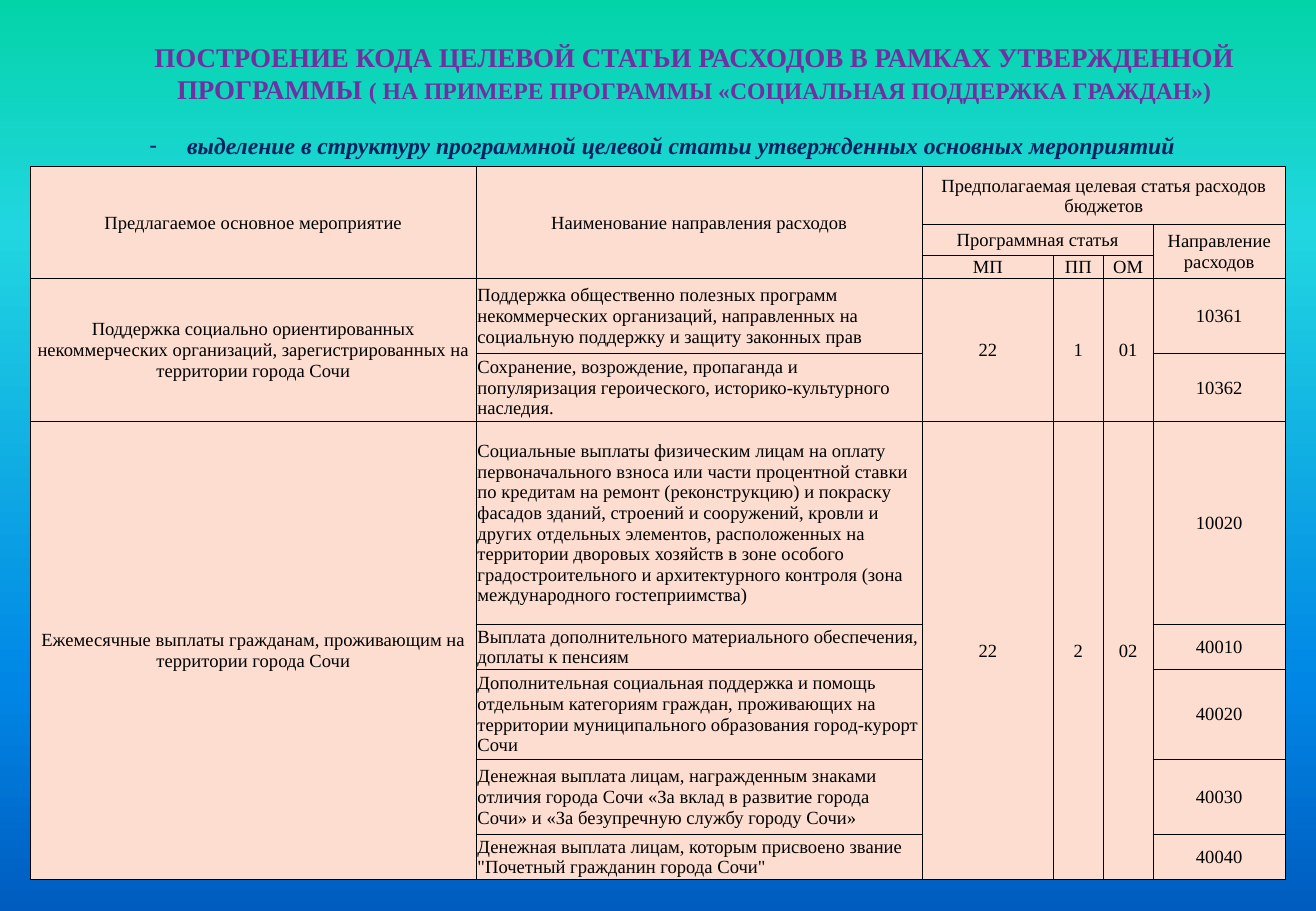
"""Builds a slide with the structure of a programme's target expenditure codes."""
from dataclasses import dataclass
from typing import Iterator

from lxml import etree
from pptx import Presentation
from pptx import util as u
from pptx.dml import color as dml
from pptx.enum import text as t
from pptx.oxml import ns

GRID_COLUMNS, GRID_ROWS = 1083, 750
SLIDE_WIDTH, SLIDE_HEIGHT = u.Inches(10.83), u.Inches(7.5)
MEASURE_COLUMN, DIRECTION_COLUMN, CODE_COLUMN, NUMBER_COLUMN = 0, 1, 2, 5
COLUMN_SPANS = (367, 367, 108, 41, 41, 109)
ROW_SPANS = (48, 25, 19, 62, 56, 167, 37, 74, 62, 37)


@dataclass(frozen=True)
class Theme:
    font: str = "Times New Roman"
    heading: str = "7030A0"
    subheading: str = "002060"
    ink: str = "000000"
    paper: str = "FCDDD0"
    sky: tuple = ((0, "03D4A8"), (25, "21D6E0"), (75, "0087E6"), (100, "005CBF"))
    heading_size: int = 16
    subheading_size: int = 14
    table_size: int = 11
    border: float = 0.5


@dataclass(frozen=True)
class Area:
    column: int
    row: int
    columns: int
    rows: int


@dataclass(frozen=True)
class Entry:
    row: int
    column: int
    words: str
    rows: int = 1
    columns: int = 1
    align: t.PP_ALIGN = t.PP_ALIGN.CENTER


@dataclass(frozen=True)
class Measure:
    name: str
    codes: tuple
    directions: tuple


THEME = Theme()
HEADING_AREA = Area(63, 33, 1017, 67)
SUBHEADING_AREA = Area(113, 103, 917, 34)
TABLE_AREA = Area(25, 137, sum(COLUMN_SPANS), sum(ROW_SPANS))

HEADER = (
    Entry(0, MEASURE_COLUMN, "Предлагаемое основное мероприятие", rows=3),
    Entry(0, DIRECTION_COLUMN, "Наименование направления расходов", rows=3),
    Entry(0, CODE_COLUMN, "Предполагаемая целевая статья расходов бюджетов", columns=4),
    Entry(1, CODE_COLUMN, "Программная статья", columns=3),
    Entry(1, NUMBER_COLUMN, "Направление расходов", rows=2),
    *(Entry(2, CODE_COLUMN + i, part) for i, part in enumerate(("МП", "ПП", "ОМ"))),
)
MEASURES = (
    Measure(
        "Поддержка социально ориентированных некоммерческих организаций, "
        "зарегистрированных на территории города Сочи",
        ("22", "1", "01"),
        (
            ("Поддержка общественно полезных программ некоммерческих организаций, "
             "направленных на социальную поддержку и защиту законных прав", "10361"),
            ("Сохранение, возрождение, пропаганда и популяризация героического, "
             "историко-культурного наследия.", "10362"),
        ),
    ),
    Measure(
        "Ежемесячные выплаты гражданам, проживающим на территории города Сочи",
        ("22", "2", "02"),
        (
            ("Социальные выплаты физическим лицам на оплату первоначального взноса или "
             "части процентной ставки по кредитам на ремонт (реконструкцию) и покраску "
             "фасадов зданий, строений и сооружений, кровли и других отдельных элементов, "
             "расположенных на территории дворовых хозяйств в зоне особого "
             "градостроительного и архитектурного контроля (зона международного "
             "гостеприимства)", "10020"),
            ("Выплата дополнительного материального обеспечения, доплаты к пенсиям", "40010"),
            ("Дополнительная социальная поддержка и помощь отдельным категориям граждан, "
             "проживающих на территории муниципального образования город-курорт Сочи", "40020"),
            ("Денежная выплата лицам, награжденным знаками отличия города Сочи «За вклад "
             "в развитие города Сочи» и «За безупречную службу городу Сочи»", "40030"),
            ("Денежная выплата лицам, которым присвоено звание "
             "\"Почетный гражданин города Сочи\"", "40040"),
        ),
    ),
)


def across(columns: int) -> int:
    return round(SLIDE_WIDTH * columns / GRID_COLUMNS)


def down(rows: int) -> int:
    return round(SLIDE_HEIGHT * rows / GRID_ROWS)


def place(area: Area) -> tuple:
    return across(area.column), down(area.row), across(area.columns), down(area.rows)


def write(paragraph, words: str, *, size: int, color: str, bold: bool = False,
          italic: bool = False, align: t.PP_ALIGN = t.PP_ALIGN.LEFT) -> None:
    paragraph.alignment = align
    run = paragraph.add_run()
    run.text = words
    run.font.name, run.font.size = THEME.font, u.Pt(size)
    run.font.bold, run.font.italic = bold, italic
    run.font.color.rgb = dml.RGBColor.from_string(color)


def prepare(placeholder, area: Area):
    placeholder.left, placeholder.top, placeholder.width, placeholder.height = place(area)
    frame = placeholder.text_frame
    frame.word_wrap, frame.auto_size = True, t.MSO_AUTO_SIZE.NONE
    frame.vertical_anchor = t.MSO_ANCHOR.TOP
    paragraph = frame.paragraphs[0]
    paragraph.space_before = u.Pt(0)
    return paragraph


def paint_sky(slide) -> None:
    sky = slide.background.fill
    sky.gradient()
    sky.gradient_angle = 270
    stops = slide.background._cSld.find(".//" + ns.qn("a:gsLst"))
    stops[:] = []
    for position, color in THEME.sky:
        stop = etree.SubElement(stops, ns.qn("a:gs"), pos=str(position * 1000))
        etree.SubElement(stop, ns.qn("a:srgbClr"), val=color)


def add_heading(slide) -> None:
    heading = prepare(slide.shapes.title, HEADING_AREA)
    frame = slide.shapes.title.text_frame
    frame.margin_left = frame.margin_right = frame.margin_top = frame.margin_bottom = 0
    heading.space_after = u.Pt(3)
    for words, size in (
        ("ПОСТРОЕНИЕ КОДА ЦЕЛЕВОЙ СТАТЬИ РАСХОДОВ В РАМКАХ УТВЕРЖДЕННОЙ ПРОГРАММЫ ",
         THEME.heading_size),
        ("( НА ПРИМЕРЕ ПРОГРАММЫ «СОЦИАЛЬНАЯ ПОДДЕРЖКА ГРАЖДАН»)", THEME.subheading_size),
    ):
        write(heading, words, size=size, color=THEME.heading, bold=True,
              align=t.PP_ALIGN.CENTER)


def add_subheading(slide) -> None:
    subheading = prepare(slide.placeholders[1], SUBHEADING_AREA)
    write(subheading, "выделение в структуру программной целевой статьи утвержденных "
          "основных мероприятий", size=THEME.subheading_size, color=THEME.subheading,
          bold=True, italic=True)
    properties = subheading._p.get_or_add_pPr()
    properties.set("marL", str(across(31)))
    properties.set("indent", str(-across(31)))
    etree.SubElement(properties, ns.qn("a:buChar"), char="-")


def style_cell(cell) -> None:
    cell.margin_left = cell.margin_right = cell.margin_top = across(1)
    cell.margin_bottom = 0
    cell.vertical_anchor = t.MSO_ANCHOR.MIDDLE
    cell.fill.solid()
    cell.fill.fore_color.rgb = dml.RGBColor.from_string(THEME.paper)
    for order, side in enumerate(("lnL", "lnR", "lnT", "lnB")):
        line = etree.Element(ns.qn("a:" + side), w=str(u.Pt(THEME.border)))
        ink = etree.SubElement(line, ns.qn("a:solidFill"))
        etree.SubElement(ink, ns.qn("a:srgbClr"), val=THEME.ink)
        cell._tc.get_or_add_tcPr().insert(order, line)
    ending = cell.text_frame.paragraphs[0]._p.get_or_add_endParaRPr()
    ending.set("sz", str(THEME.table_size * 100))


def table_entries() -> Iterator[Entry]:
    yield from HEADER
    row = 3
    for measure in MEASURES:
        height = len(measure.directions)
        yield Entry(row, MEASURE_COLUMN, measure.name, rows=height)
        for offset, code in enumerate(measure.codes):
            yield Entry(row, CODE_COLUMN + offset, code, rows=height)
        for offset, (direction, number) in enumerate(measure.directions):
            yield Entry(row + offset, DIRECTION_COLUMN, direction, align=t.PP_ALIGN.LEFT)
            yield Entry(row + offset, NUMBER_COLUMN, number)
        row += height


def add_code_table(slide) -> None:
    codes = slide.shapes.add_table(len(ROW_SPANS), len(COLUMN_SPANS), *place(TABLE_AREA)).table
    codes.first_row = codes.horz_banding = False
    for column, span in zip(codes.columns, COLUMN_SPANS):
        column.width = across(span)
    for row, span in zip(codes.rows, ROW_SPANS):
        row.height = down(span)
    for cell in codes.iter_cells():
        style_cell(cell)
    for entry in table_entries():
        cell = codes.cell(entry.row, entry.column)
        if entry.rows * entry.columns > 1:
            cell.merge(codes.cell(entry.row + entry.rows - 1, entry.column + entry.columns - 1))
        write(cell.text_frame.paragraphs[0], entry.words, size=THEME.table_size,
              color=THEME.ink, align=entry.align)


def main() -> None:
    deck = Presentation()
    deck.slide_width, deck.slide_height = SLIDE_WIDTH, SLIDE_HEIGHT
    slide = deck.slides.add_slide(deck.slide_layouts[1])
    for build in (paint_sky, add_heading, add_subheading, add_code_table):
        build(slide)
    deck.save("out.pptx")


if __name__ == "__main__":
    main()
